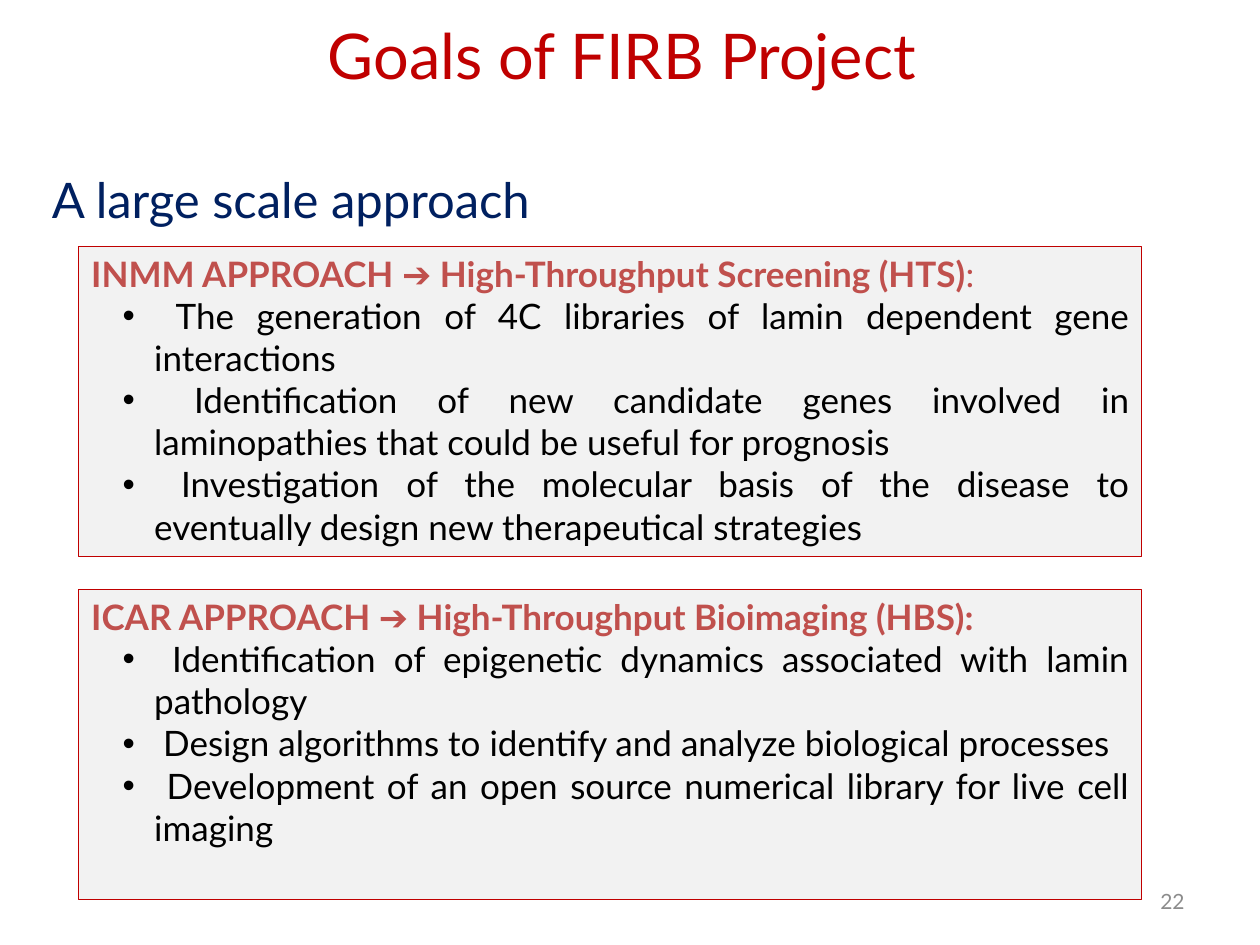
from pptx import Presentation
from pptx.dml.color import RGBColor as Rgb
from pptx.enum.shapes import MSO_SHAPE as Shape
from pptx.enum.text import MSO_ANCHOR as Anchor, PP_ALIGN as Align
from pptx.oxml.ns import qn
from pptx.util import Pt
from lxml import etree

FONT = "Lato"
RED, ROSE, NAVY = "C00000", "C0504D", "002060"
BLACK, GRAY, PALE = "000000", "8C8C8C", "F2F2F2"

INMM = [
    " The generation of 4C libraries of lamin dependent gene interactions",
    " Identification of new candidate genes involved in laminopathies "
    "that could be useful for prognosis",
    " Investigation of the molecular basis of the disease to eventually "
    "design new therapeutical strategies",
]
ICAR = [
    " Identification of epigenetic dynamics associated with lamin pathology",
    " Design algorithms to identify and analyze biological processes ",
    " Development of an open source numerical library for live cell imaging",
]


def color(code):
    return Rgb.from_string(code)


def style(item, form):
    for key, val in form.items():
        setattr(item, key, val)


def add_run(para, text, size, code, bold=False):
    run = para.add_run()
    run.text = text
    style(run.font, {"name": FONT, "size": Pt(size), "bold": bold})
    run.font.color.rgb = color(code)


def add_label(slide, box, text, size, code, align, anchor):
    frame = slide.shapes.add_textbox(*map(Pt, box)).text_frame
    style(frame, {"word_wrap": True, "vertical_anchor": anchor})
    para = frame.paragraphs[0]
    para.alignment = align
    add_run(para, text, size, code)


def add_bullet(para):
    props = para._p.get_or_add_pPr()
    style_map = {"marL": Pt(36), "indent": Pt(-18), "lvl": 1}
    for key, val in style_map.items():
        props.set(key, str(int(val)))
    font = etree.SubElement(props, qn("a:buFont"))
    font.set("typeface", "Arial")
    mark = etree.SubElement(props, qn("a:buChar"))
    mark.set("char", "•")


def add_panel(slide, top, head, goals):
    panel = slide.shapes.add_shape(
        Shape.RECTANGLE, Pt(45), Pt(top), Pt(607.5), Pt(177))
    panel.shadow.inherit = False
    panel.fill.solid()
    panel.fill.fore_color.rgb = color(PALE)
    panel.line.color.rgb = color(RED)
    panel.line.width = Pt(0.75)
    frame = panel.text_frame
    style(frame, {"word_wrap": True, "vertical_anchor": Anchor.TOP})

    # Heading: each run is a (text, bold) pair
    para = frame.paragraphs[0]
    para.alignment = Align.JUSTIFY
    for text, bold in head:
        add_run(para, text, 20, ROSE, bold)

    # Goals
    for goal in goals:
        para = frame.add_paragraph()
        add_bullet(para)
        para.alignment = Align.JUSTIFY
        add_run(para, goal, 20, BLACK)


def main():
    deck = Presentation()
    style(deck, {"slide_width": Pt(720), "slide_height": Pt(540)})
    slide = deck.slides.add_slide(deck.slide_layouts[6])

    # Title, subtitle and page number
    add_label(slide, (36, 0, 648, 62), "Goals of FIRB Project ",
              36, RED, Align.CENTER, Anchor.MIDDLE)
    add_label(slide, (22.5, 93.5, 297.5, 41), "A large scale approach",
              28, NAVY, Align.JUSTIFY, Anchor.TOP)
    add_label(slide, (516, 500.5, 168, 29), "22",
              12, GRAY, Align.RIGHT, Anchor.MIDDLE)

    # The two approaches
    add_panel(slide, 141, [
        ("INMM APPROACH ➔ High-Throughput Screening (HTS)", True),
        (":", False)], INMM)
    add_panel(slide, 337, [
        ("ICAR APPROACH ➔ High-Throughput Bioimaging (HBS):", True)], ICAR)

    deck.save("out.pptx")


if __name__ == "__main__":
    main()
